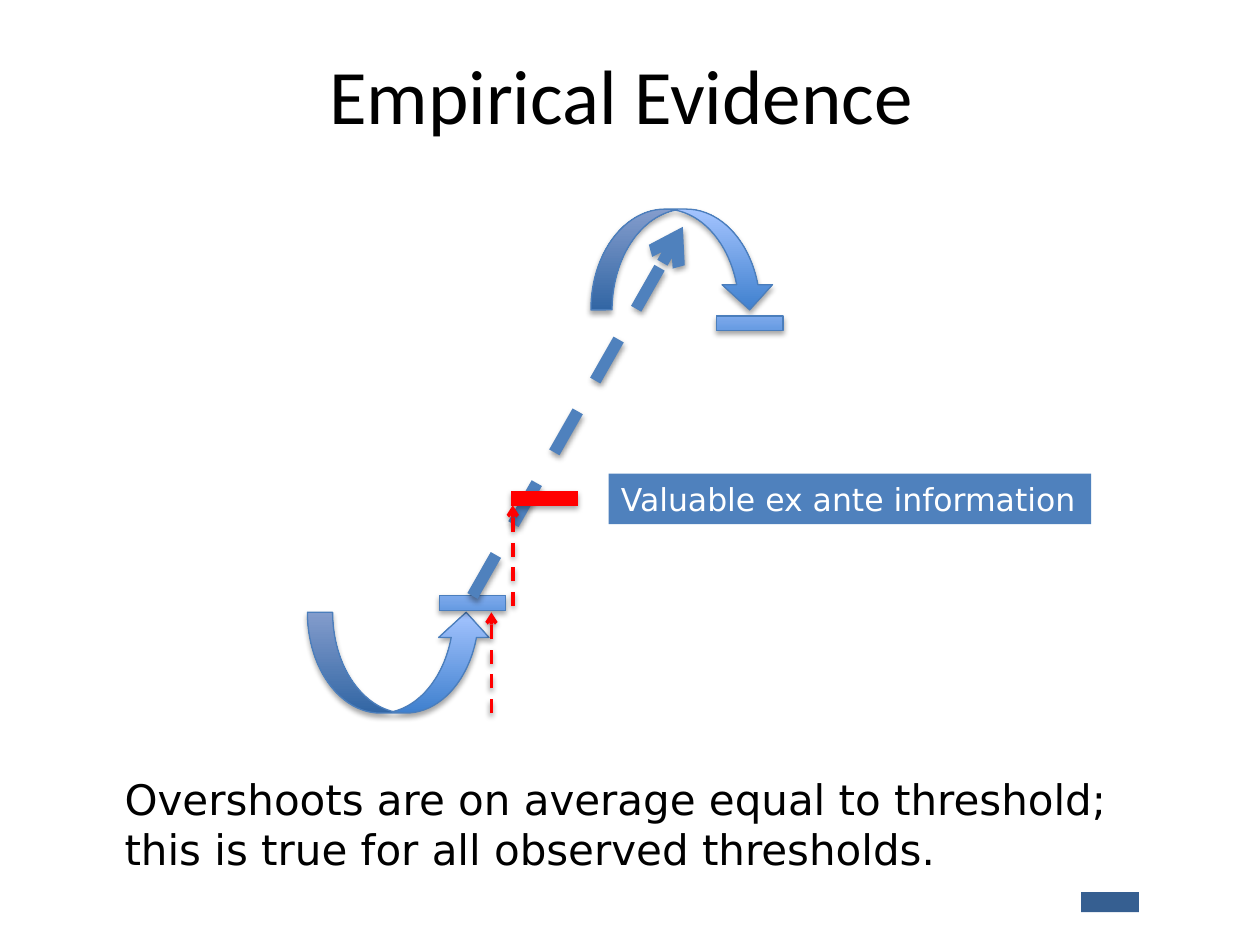
from lxml import etree
from pptx import Presentation
from pptx.dml.color import RGBColor
from pptx.enum.dml import MSO_LINE
from pptx.enum.shapes import MSO_CONNECTOR, MSO_SHAPE
from pptx.enum.text import MSO_ANCHOR, PP_ALIGN
from pptx.oxml import parse_xml
from pptx.oxml.ns import nsdecls, qn
from pptx.util import Inches, Pt

COLORS = {
    "text": "000000", "white": "FFFFFF", "navy": "365F91", "blue": "4F81BD",
    "outline": "4B7EBC", "dark": "3F80CE", "light": "A4C4FF", "red": "FF0000",
}
RGB = {name: RGBColor.from_string(value) for name, value in COLORS.items()}


def add_shadow(item, distance, opacity):
    """Give a shape or connector a soft shadow straight below it."""
    item._element.spPr.append(parse_xml(
        f'<a:effectLst {nsdecls("a")}><a:outerShdw blurRad="{Pt(3.1)}" dist="{Pt(distance)}" '
        'dir="5400000" rotWithShape="0"><a:srgbClr val="000000">'
        f'<a:alpha val="{opacity * 1000}"/></a:srgbClr></a:outerShdw></a:effectLst>'))


def style_text(frame, font_name, size, color):
    for paragraph in frame.paragraphs:
        for run in paragraph.runs:
            run.font.name = font_name
            run.font.size = Pt(size)
            run.font.color.rgb = RGB[color]


prs = Presentation()
prs.slide_width, prs.slide_height = Inches(10), Inches(7.5)
slide = prs.slides.add_slide(prs.slide_layouts[5])
shapes = slide.shapes

title = shapes.title
title.left, title.top = Inches(0.5), Inches(0.12)
title.width, title.height = Inches(9), Inches(1.25)
title.text_frame.text = "Empirical Evidence "
title.text_frame.vertical_anchor = MSO_ANCHOR.MIDDLE
title.text_frame.paragraphs[0].alignment = PP_ALIGN.CENTER
style_text(title.text_frame, "Calibri", 44, "text")

footer_mark = shapes.add_shape(MSO_SHAPE.RECTANGLE, Inches(8.58), Inches(7.08),
                               Inches(0.46), Inches(0.16))
footer_mark.shadow.inherit = False
footer_mark.fill.solid()
footer_mark.fill.fore_color.rgb = RGB["navy"]
footer_mark.line.fill.background()

# Turning points: curved arrows and the level bars they reach
TURN_SIZE, BAR_SIZE = (1.46, 0.8), (0.72, 0.49)
turning_points = [
    (MSO_SHAPE.CURVED_UP_ARROW, 2.44, 4.86, TURN_SIZE),
    (MSO_SHAPE.CURVED_DOWN_ARROW, 4.69, 1.66, TURN_SIZE),
    (MSO_SHAPE.MATH_MINUS, 5.59, 2.32, BAR_SIZE),
    (MSO_SHAPE.MATH_MINUS, 3.39, 4.54, BAR_SIZE),
]
for preset, left, top, (width, height) in turning_points:
    mark = shapes.add_shape(preset, Inches(left), Inches(top), Inches(width), Inches(height))
    if preset == MSO_SHAPE.CURVED_DOWN_ARROW:
        mark.adjustments[0] = 0.21
    mark.fill.gradient()
    mark.fill.gradient_angle = 90
    for stop, color in zip(mark.fill.gradient_stops, ("dark", "light")):
        stop.color.rgb = RGB[color]
    mark.line.color.rgb = RGB["outline"]
    mark.line.width = Pt(0.75)
    add_shadow(mark, 1.8, 35)

# Price move, then the red threshold bar and its two equal steps
moves = [
    ((3.75, 4.73), (5.42, 1.8), "blue", 6.75),
    ((3.9, 5.66), (3.9, 4.86), "red", 2),
    ((4.07, 4.81), (4.07, 4.01), "red", 2),
]
for start, end, color, weight in moves:
    move = shapes.add_connector(MSO_CONNECTOR.STRAIGHT, *map(Inches, start + end))
    move.line.color.rgb = RGB[color]
    move.line.width = Pt(weight)
    move.line.dash_style = MSO_LINE.DASH
    etree.SubElement(move.line._get_or_add_ln(), qn("a:tailEnd"), type="arrow")
    add_shadow(move, 1.6, 38)
    if color == "blue":
        threshold = shapes.add_shape(MSO_SHAPE.MATH_MINUS, Inches(3.96), Inches(3.71),
                                     *map(Inches, BAR_SIZE))
        threshold.fill.solid()
        threshold.fill.fore_color.rgb = RGB["red"]
        threshold.line.fill.background()
        add_shadow(threshold, 1.8, 35)

finding = shapes.add_textbox(Inches(0.89), Inches(6.09), Inches(8.12), Inches(0.91)).text_frame
finding.word_wrap = False
finding.text = ("Overshoots are on average equal to threshold;\n"
                "this is true for all observed thresholds.")
style_text(finding, "DejaVu Sans", 24, "text")

callout = shapes.add_textbox(Inches(4.83), Inches(3.76), Inches(3.83), Inches(0.4))
callout.fill.solid()
callout.fill.fore_color.rgb = RGB["blue"]
callout.text_frame.word_wrap = True
callout.text_frame.text = "Valuable ex ante information"
style_text(callout.text_frame, "DejaVu Sans", 18, "white")

prs.save("out.pptx")
